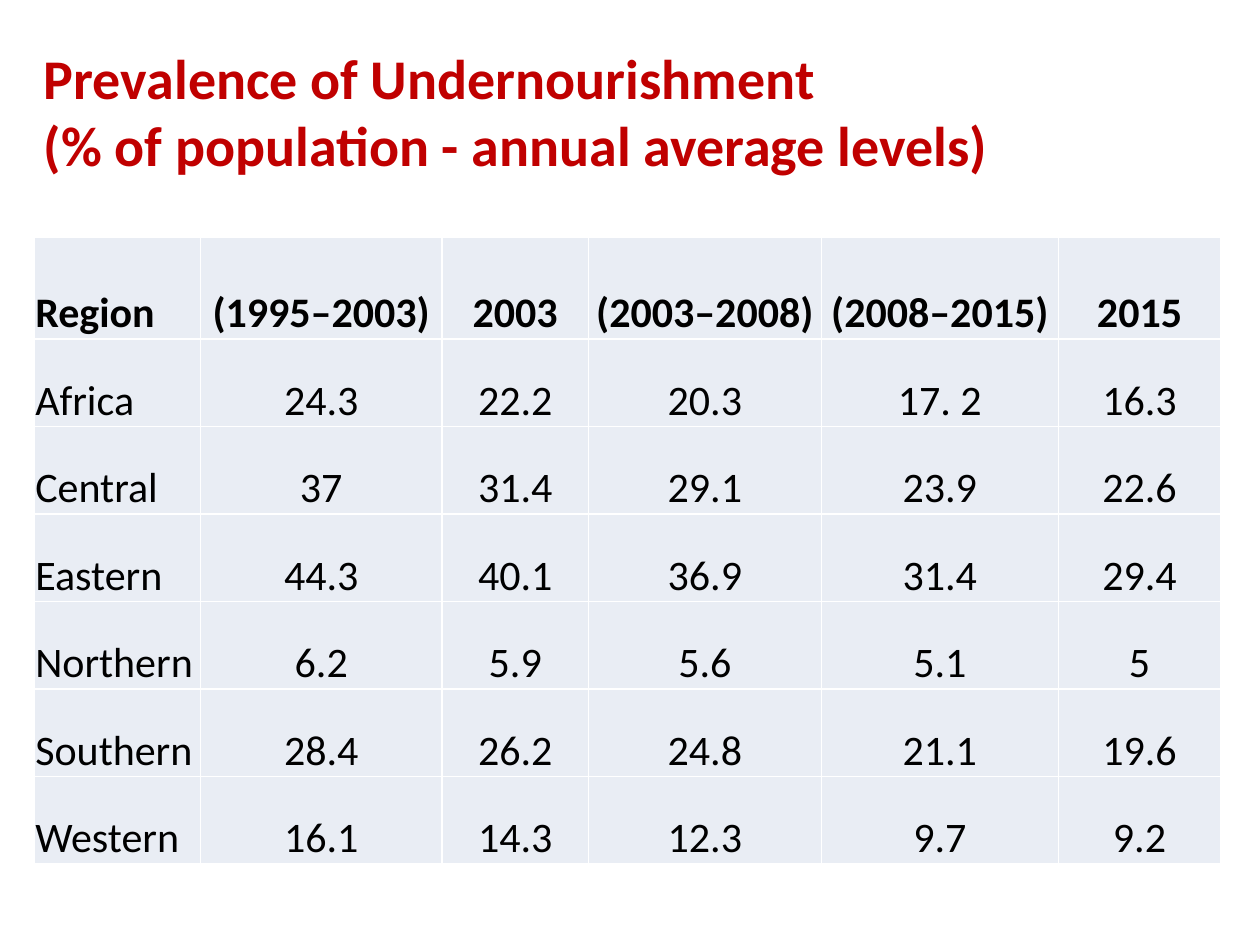
from lxml import etree
from pptx import Presentation
from pptx import util as u
from pptx.dml import color
from pptx.enum import text
from pptx.oxml import ns

COLOURS = {"title": "C00000", "ink": "000000", "cell": "E9EDF4", "border": "FFFFFF"}
COLUMN_WIDTHS = [1.32, 1.92, 1.16, 1.85, 1.88, 1.29]
HEADER_HEIGHT = 0.81
ROWS = [
    ["Region", "(1995–2003)", "2003", "(2003–2008)", "(2008–2015)", "2015"],
    ["Africa", "24.3", "22.2", "20.3", "17. 2", "16.3"],
    ["Central", "37", "31.4", "29.1", "23.9", "22.6"],
    ["Eastern", "44.3", "40.1", "36.9", "31.4", "29.4"],
    ["Northern", "6.2", "5.9", "5.6", "5.1", "5"],
    ["Southern", "28.4", "26.2", "24.8", "21.1", "19.6"],
    ["Western", "16.1", "14.3", "12.3", "9.7", "9.2"],
]


def write_text(frame, words, size, colour, bold=False, align=text.PP_ALIGN.LEFT):
    para = frame.paragraphs[0]
    para.text = words
    para.alignment = align
    for span in para.runs:
        span.font.name = "Calibri"
        span.font.size = u.Pt(size)
        span.font.bold = bold
        span.font.color.rgb = color.RGBColor.from_string(COLOURS[colour])


def add_borders(cell, colour, width):
    properties = cell._tc.get_or_add_tcPr()
    for side in ("lnL", "lnR", "lnT", "lnB"):
        line = etree.SubElement(properties, ns.qn(f"a:{side}"), w=str(u.Pt(width)))
        fill = etree.SubElement(line, ns.qn("a:solidFill"))
        etree.SubElement(fill, ns.qn("a:srgbClr"), val=COLOURS[colour])


def add_title(page, left, top, width, height):
    box = page.shapes.add_textbox(*map(u.Inches, (left, top, width, height)))
    frame = box.text_frame
    frame.word_wrap = True
    frame.vertical_anchor = text.MSO_ANCHOR.MIDDLE
    write_text(
        frame,
        "Prevalence of Undernourishment \n(% of population - annual average levels)",
        size=32, colour="title", bold=True,
    )


def add_region_table(page, left, top, width, height):
    table = page.shapes.add_table(
        len(ROWS), len(COLUMN_WIDTHS), *map(u.Inches, (left, top, width, height))
    ).table
    for column, share in zip(table.columns, COLUMN_WIDTHS):
        column.width = u.Inches(width * share / sum(COLUMN_WIDTHS))
    body_height = (height - HEADER_HEIGHT) / (len(ROWS) - 1)
    for r, values in enumerate(ROWS):
        table.rows[r].height = u.Inches(body_height if r else HEADER_HEIGHT)
        for c, value in enumerate(values):
            cell = table.cell(r, c)
            cell.margin_left = cell.margin_right = cell.margin_top = u.Inches(0.01)
            cell.margin_bottom = 0
            cell.vertical_anchor = text.MSO_ANCHOR.BOTTOM
            add_borders(cell, "border", 1)
            cell.fill.solid()
            cell.fill.fore_color.rgb = color.RGBColor.from_string(COLOURS["cell"])
            write_text(
                cell.text_frame, value, size=24, colour="ink", bold=r == 0,
                align=text.PP_ALIGN.CENTER if c else text.PP_ALIGN.LEFT,
            )


def main():
    deck = Presentation()
    deck.slide_width, deck.slide_height = u.Inches(10), u.Inches(7.5)
    page = deck.slides.add_slide(deck.slide_layouts[6])
    add_title(page, 0.25, 0.25, 9.63, 1.25)
    add_region_table(page, 0.27, 1.88, 9.42, 4.98)
    deck.save("out.pptx")


if __name__ == "__main__":
    main()
